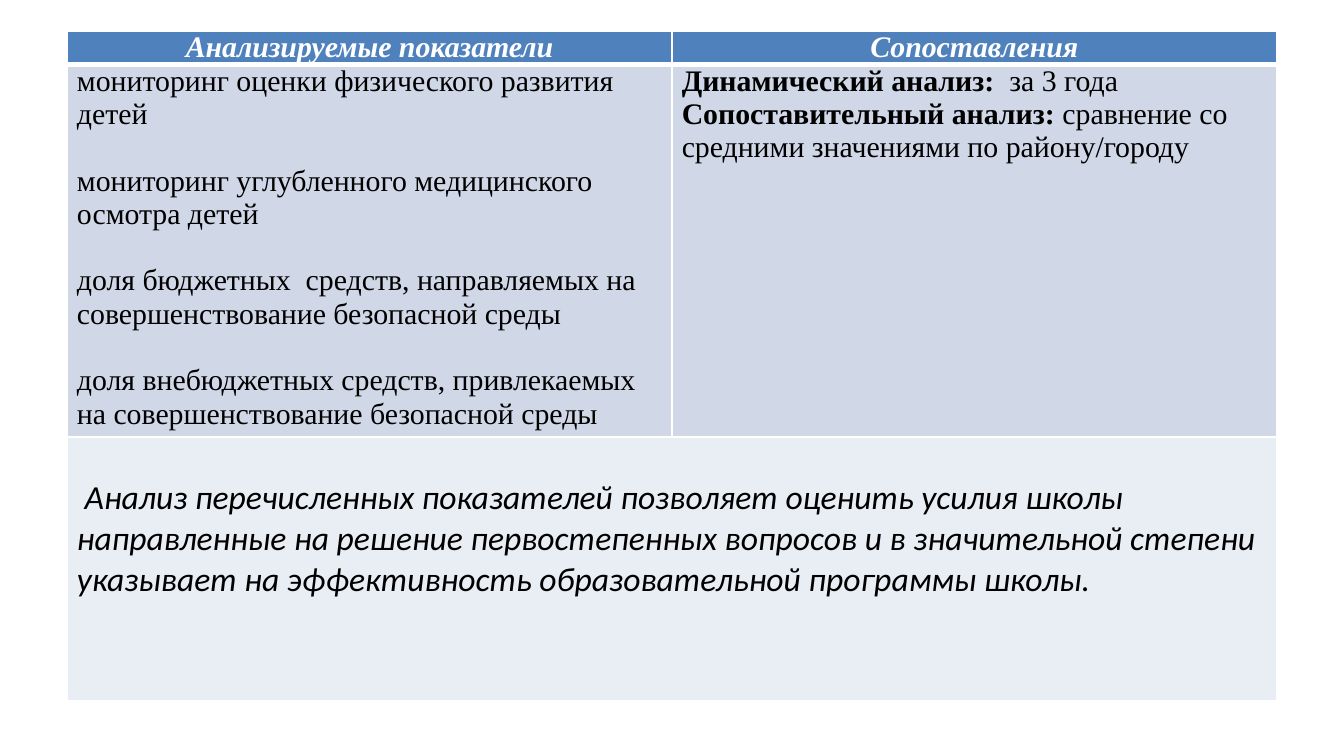
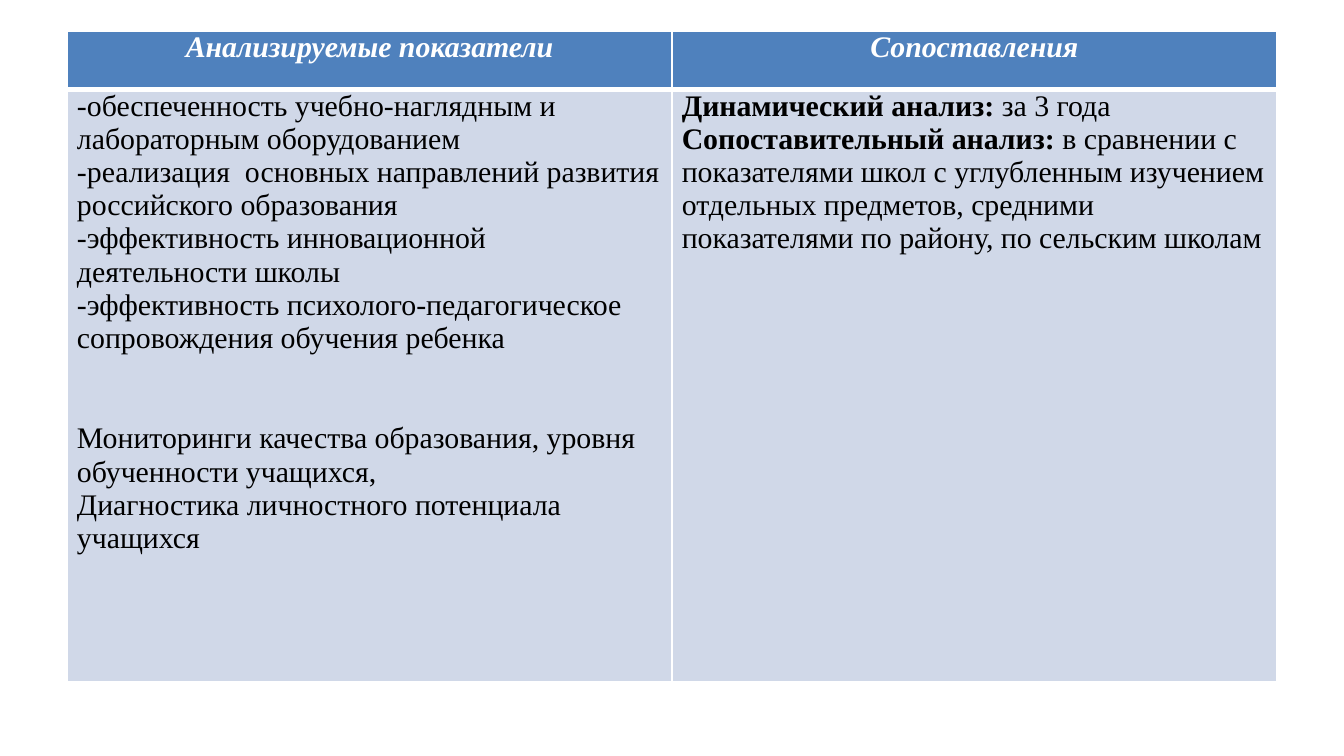
from dataclasses import dataclass

from lxml.etree import SubElement
from pptx import Presentation
from pptx.dml.color import RGBColor
from pptx.enum.text import PP_ALIGN
from pptx.oxml.ns import qn
from pptx.util import Emu, Pt

EMU_PER_PX = 9525
SLIDE_W, SLIDE_H = 960, 540
TABLE_LEFT, TABLE_TOP, COLUMN_W = 48, 22, 432
CELL_INSET = 7

WHITE, BLACK = "FFFFFF", "000000"
HEADER_FILL, BODY_FILL, SUMMARY_FILL = "4F81BD", "D0D8E8", "E9EDF4"
SERIF, SANS = "Times New Roman", "Calibri"
GRID_PT, HEADER_RULE_PT = 1, 3
LINE_PT = 18  # height of one line of body text


@dataclass(frozen=True)
class Entry:
    """One paragraph: an optional bold lead, its text and the gap above it."""
    text: str
    lead: str = ""
    gap_pt: int = 0


@dataclass(frozen=True)
class Indicators:
    """A table that sets indicators against the ways they are compared."""
    header_h: int
    body_h: int
    measures: list[Entry]
    comparisons: list[Entry]
    summary: str = ""
    summary_h: int = 0


HEADINGS = ("Анализируемые показатели", "Сопоставления")

HEALTH = Indicators(
    header_h=24,
    body_h=266,
    measures=[
        Entry("мониторинг оценки физического развития детей"),
        Entry("мониторинг углубленного медицинского осмотра детей", gap_pt=LINE_PT),
        Entry("доля бюджетных  средств, направляемых на совершенствование "
              "безопасной среды", gap_pt=LINE_PT),
        Entry("доля внебюджетных средств, привлекаемых на совершенствование "
              "безопасной среды", gap_pt=LINE_PT),
    ],
    comparisons=[
        Entry("за 3 года", lead="Динамический анализ:  "),
        Entry("сравнение со средними значениями по району/городу",
              lead="Сопоставительный анализ: "),
    ],
    summary="Анализ перечисленных показателей позволяет оценить усилия школы "
            "направленные на решение первостепенных вопросов и в значительной "
            "степени указывает на эффективность образовательной программы школы.",
    summary_h=189,
)

EDUCATION = Indicators(
    header_h=42,
    body_h=423,
    measures=[
        Entry("-обеспеченность учебно-наглядным и лабораторным оборудованием"),
        Entry("-реализация  основных направлений развития российского образования"),
        Entry("-эффективность инновационной деятельности школы"),
        Entry("-эффективность психолого-педагогическое сопровождения обучения ребенка"),
        Entry("Мониторинги качества образования, уровня обученности учащихся,",
              gap_pt=2 * LINE_PT),
        Entry("Диагностика личностного потенциала учащихся"),
    ],
    comparisons=[
        Entry("за 3 года", lead="Динамический анализ: "),
        Entry(" в сравнении с показателями школ с углубленным изучением отдельных "
              "предметов, средними показателями по району, по сельским школам",
              lead="Сопоставительный анализ:"),
    ],
)


def px(length: int) -> Emu:
    return Emu(length * EMU_PER_PX)


def rgb(color: str) -> RGBColor:
    return RGBColor.from_string(color)


def add_text(paragraph, text: str, *, size: int = 16, font: str = SERIF,
             color: str = BLACK, bold: bool = False, italic: bool = False) -> None:
    run = paragraph.add_run()
    run.text = text
    run.font.size = Pt(size)
    run.font.name = font
    run.font.color.rgb = rgb(color)
    run.font.bold = bold
    run.font.italic = italic


def format_cell(cell, fill: str, *, rule_above: int = GRID_PT,
                rule_below: int = GRID_PT, inset_top: int = 0) -> None:
    cell.margin_left = cell.margin_right = px(CELL_INSET)
    cell.margin_top, cell.margin_bottom = px(inset_top), 0
    properties = cell._tc.get_or_add_tcPr()
    borders = {"lnL": GRID_PT, "lnR": GRID_PT, "lnT": rule_above, "lnB": rule_below}
    for side, width in borders.items():
        border = SubElement(properties, qn(f"a:{side}"), w=str(Pt(width)))
        solid = SubElement(border, qn("a:solidFill"))
        SubElement(solid, qn("a:srgbClr"), val=WHITE)
    cell.fill.solid()
    cell.fill.fore_color.rgb = rgb(fill)


def fill_entries(cell, entries: list[Entry]) -> None:
    format_cell(cell, BODY_FILL, rule_above=HEADER_RULE_PT)
    frame = cell.text_frame
    for index, entry in enumerate(entries):
        paragraph = frame.add_paragraph() if index else frame.paragraphs[0]
        if entry.gap_pt:
            paragraph.space_before = Pt(entry.gap_pt)
        if entry.lead:
            add_text(paragraph, entry.lead, bold=True)
        add_text(paragraph, entry.text)


def fill_summary(table, summary: str) -> None:
    first, last = table.cell(2, 0), table.cell(2, 1)
    first.merge(last)
    format_cell(first, SUMMARY_FILL, inset_top=29)
    format_cell(last, SUMMARY_FILL)
    paragraph = first.text_frame.paragraphs[0]
    add_text(paragraph, " ", size=18, font=SANS)
    add_text(paragraph, summary, size=18, font=SANS, italic=True)


def add_indicator_slide(deck, indicators: Indicators) -> None:
    slide = deck.slides.add_slide(deck.slide_layouts.get_by_name("Blank"))
    heights = [indicators.header_h, indicators.body_h]
    if indicators.summary:
        heights.append(indicators.summary_h)
    table = slide.shapes.add_table(
        len(heights), len(HEADINGS), px(TABLE_LEFT), px(TABLE_TOP),
        px(COLUMN_W * len(HEADINGS)), px(sum(heights))).table
    table.first_row = table.horz_banding = False
    for row, height in zip(table.rows, heights):
        row.height = px(height)

    for column, heading in enumerate(HEADINGS):
        cell = table.cell(0, column)
        format_cell(cell, HEADER_FILL, rule_below=HEADER_RULE_PT)
        paragraph = cell.text_frame.paragraphs[0]
        paragraph.alignment = PP_ALIGN.CENTER
        add_text(paragraph, heading, color=WHITE, bold=True, italic=True)

    fill_entries(table.cell(1, 0), indicators.measures)
    fill_entries(table.cell(1, 1), indicators.comparisons)
    if indicators.summary:
        fill_summary(table, indicators.summary)


def main() -> None:
    deck = Presentation()
    deck.slide_width, deck.slide_height = px(SLIDE_W), px(SLIDE_H)
    for indicators in (HEALTH, EDUCATION):
        add_indicator_slide(deck, indicators)
    deck.save("out.pptx")


if __name__ == "__main__":
    main()
